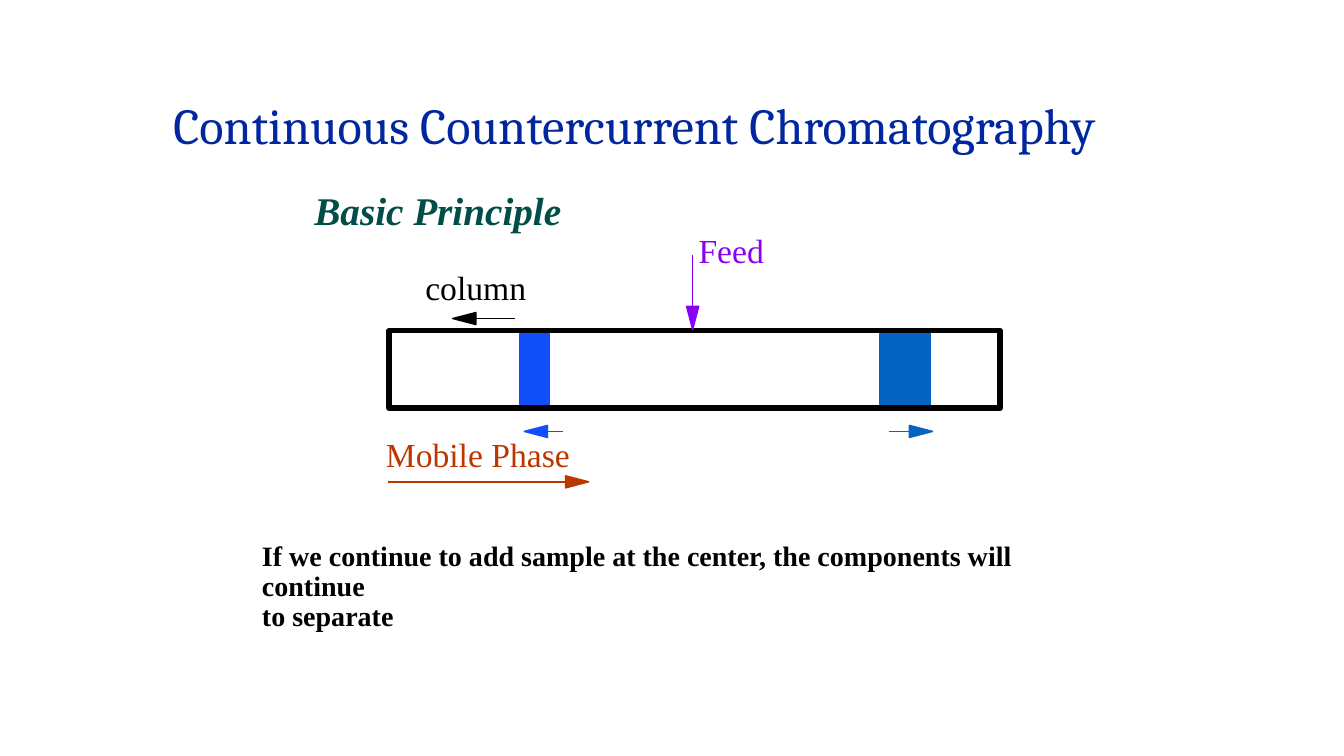
"""Build a slide on the principle of continuous countercurrent chromatography."""
from pptx import Presentation
from pptx.dml.color import RGBColor
from pptx.enum import shapes, text
from pptx.oxml import ns
from pptx.util import Inches, Pt
from lxml import etree

NAVY = RGBColor(0x00, 0x27, 0x9F)
TEAL = RGBColor(0x00, 0x4E, 0x47)
VIOLET = RGBColor(0x89, 0x01, 0xF3)
RUST = RGBColor(0xBC, 0x37, 0x00)
BLUE = RGBColor(0x11, 0x4F, 0xFB)
AZURE = RGBColor(0x05, 0x63, 0xC1)
BLACK = RGBColor(0, 0, 0)

TOP, TALL = 3.28, 0.77
BARS = [
    (5.15, 0.3, BLUE, BLUE, 1),
    (8.73, 0.5, AZURE, AZURE, 1),
    (3.86, 6.06, None, BLACK, 4),
]
ARROWS = [
    ((6.87, 2.53), (6.87, 3.27), VIOLET),
    ((3.85, 4.78), (5.84, 4.78), RUST),
    ((5.11, 3.16), (4.49, 3.16), BLACK),
    ((5.58, 4.28), (5.2, 4.28), BLUE),
    ((8.82, 4.28), (9.25, 4.28), AZURE),
]
HEAD, HALF = 0.23, 0.06
LABELS = [
    (["Basic Principle"], (3.02, 1.85, 2.67, 0.52),
     dict(size=28, color=TEAL, bold=True, italic=True)),
    (["Mobile Phase"], (3.73, 4.3, 2.04, 0.46), dict(color=RUST)),
    (["Feed"], (6.83, 2.28, 0.85, 0.46), dict(color=VIOLET)),
    (["column"], (4.12, 2.64, 1.21, 0.46), dict()),
    (["If we continue to add sample at the center, the components will continue",
      "to separate"], (2.5, 5.33, 8.6, 0.7),
     dict(size=20, bold=True, wrap=True)),
    (["Continuous Countercurrent Chromatography"], (1.62, 0.95, 10.79, 0.66),
     dict(size=36, color=NAVY, font="Cambria", wrap=True)),
]


def paint(shape, fill, line, width):
    shape.shadow.inherit = False
    if fill is None:
        shape.fill.background()
    else:
        shape.fill.solid()
        shape.fill.fore_color.rgb = fill
    shape.line.color.rgb = line
    shape.line.width = Pt(width)


def add_bar(slide, left, wide, fill, line, width):
    box = [Inches(n) for n in (left, TOP, wide, TALL)]
    bar = slide.shapes.add_shape(shapes.MSO_SHAPE.RECTANGLE, *box)
    paint(bar, fill, line, width)


def add_arrow(slide, tail, tip, color):
    span = abs(tip[0] - tail[0]) + abs(tip[1] - tail[1])
    dx, dy = [(b - a) / span for a, b in zip(tail, tip)]
    neck = (tip[0] - HEAD * dx, tip[1] - HEAD * dy)
    ends = [Inches(n) for n in (*tail, *neck)]
    shaft = slide.shapes.add_connector(shapes.MSO_CONNECTOR.STRAIGHT, *ends)
    shaft.line.color.rgb = color
    shaft.line.width = Pt(1)
    etree.SubElement(shaft.element.spPr, ns.qn("a:effectLst"))
    wings = [(Inches(neck[0] + side * dy), Inches(neck[1] + side * dx))
             for side in (HALF, -HALF)]
    form = slide.shapes.build_freeform(Inches(tip[0]), Inches(tip[1]))
    form.add_line_segments(wings, close=True)
    paint(form.convert_to_shape(), color, color, 1)


def add_label(slide, lines, box, size=24, color=BLACK, font="Times New Roman",
              bold=False, italic=False, wrap=False):
    frame = slide.shapes.add_textbox(*[Inches(n) for n in box]).text_frame
    frame.word_wrap = wrap
    frame.auto_size = text.MSO_AUTO_SIZE.SHAPE_TO_FIT_TEXT
    frame.text = "\n".join(lines)
    for para in frame.paragraphs:
        para.line_spacing = 0.9
        face = para.runs[0].font
        face.name, face.size = font, Pt(size)
        face.bold, face.italic = bold, italic
        face.color.rgb = color


def main():
    deck = Presentation()
    deck.slide_width, deck.slide_height = Inches(13.33), Inches(7.5)
    slide = deck.slides.add_slide(deck.slide_layouts[6])
    for bar in BARS:
        add_bar(slide, *bar)
    for arrow in ARROWS:
        add_arrow(slide, *arrow)
    for lines, box, style in LABELS:
        add_label(slide, lines, box, **style)
    deck.save("out.pptx")


if __name__ == "__main__":
    main()
